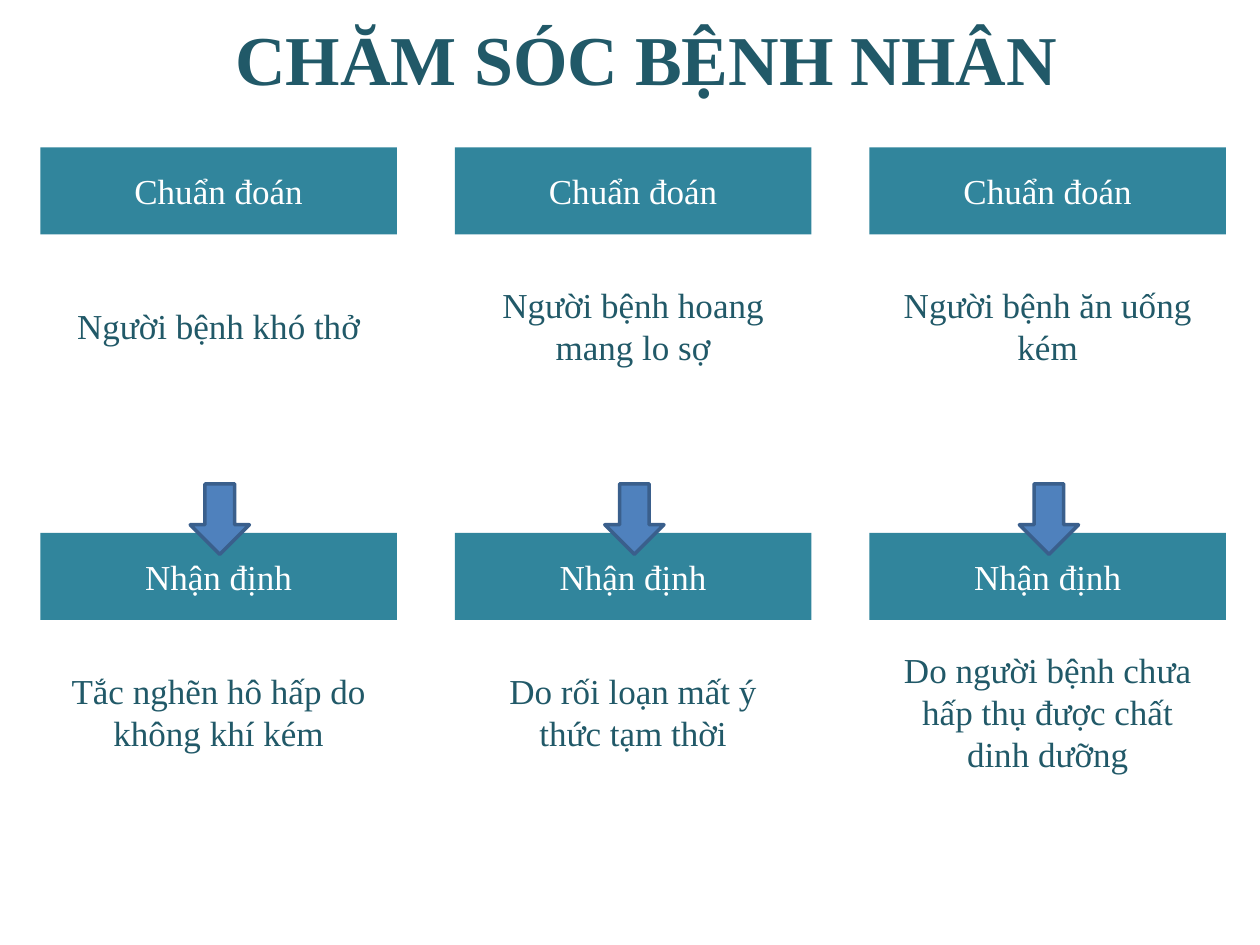
from pptx import Presentation
from pptx.dml.color import RGBColor
from pptx.enum.shapes import MSO_SHAPE as Shape
from pptx.enum.text import MSO_ANCHOR as Anchor, PP_ALIGN as Align
from pptx.util import Inches, Pt

WHITE = RGBColor(0xFF, 0xFF, 0xFF)
TEAL = RGBColor(0x31, 0x85, 0x9C)
DARK = RGBColor(0x21, 0x59, 0x68)
BLUE = RGBColor(0x4F, 0x81, 0xBD)
NAVY = RGBColor(0x3A, 0x5F, 0x8C)
FACE = "Times New Roman"

LEFT, PITCH, SIDE, BAR = 0.32, 3.29, 2.83, 0.69

ROWS = [
    (1.17, "Chuẩn đoán", [
        ["Người bệnh khó thở"],
        ["Người bệnh hoang", "mang lo sợ"],
        ["Người bệnh ăn uống", "kém"],
    ]),
    (4.23, "Nhận định", [
        ["Tắc nghẽn hô hấp do", "không khí kém"],
        ["Do rối loạn mất ý", "thức tạm thời"],
        ["Do người bệnh chưa", "hấp thụ được chất", "dinh dưỡng"],
    ]),
]

prs = Presentation()
prs.slide_width, prs.slide_height = Inches(10), Inches(7.5)
slide = prs.slides.add_slide(prs.slide_layouts[6])


def style(para, size, color, align):
    para.alignment = align
    para.font.name = FACE
    para.font.size = Pt(size)
    para.font.color.rgb = color


def add_box(col, top, height, fill, color, lines):
    """Add a borderless box in a column, one paragraph per line."""
    box = slide.shapes.add_shape(
        Shape.RECTANGLE, Inches(LEFT + col * PITCH), Inches(top),
        Inches(SIDE), Inches(height))
    box.shadow.inherit = False
    box.fill.solid()
    box.fill.fore_color.rgb = fill
    box.line.fill.background()
    frame = box.text_frame
    frame.word_wrap = True
    frame.vertical_anchor = Anchor.MIDDLE
    frame.text = "\n".join(lines)
    for para in frame.paragraphs:
        style(para, 20, color, Align.CENTER)


# Title
title = slide.shapes.add_textbox(
    Inches(1.77), Inches(0), Inches(8.23), Inches(1.17))
frame = title.text_frame
frame.word_wrap = True
frame.margin_top = Inches(0.12)
frame.text = "CHĂM SÓC BỆNH NHÂN"
style(frame.paragraphs[0], 40, DARK, Align.LEFT)
frame.paragraphs[0].font.bold = True

# Panels with a heading bar on top
for top, head, cells in ROWS:
    for col, lines in enumerate(cells):
        add_box(col, top, SIDE, WHITE, DARK, lines)
        add_box(col, top, BAR, TEAL, WHITE, [head])

# Arrows from the upper row to the lower row
for col in range(3):
    arrow = slide.shapes.add_shape(
        Shape.DOWN_ARROW, Inches(LEFT + col * PITCH + 1.19), Inches(3.84),
        Inches(0.47), Inches(0.56))
    arrow.shadow.inherit = False
    arrow.fill.solid()
    arrow.fill.fore_color.rgb = BLUE
    arrow.line.color.rgb = NAVY
    arrow.line.width = Pt(2)

prs.save("out.pptx")
